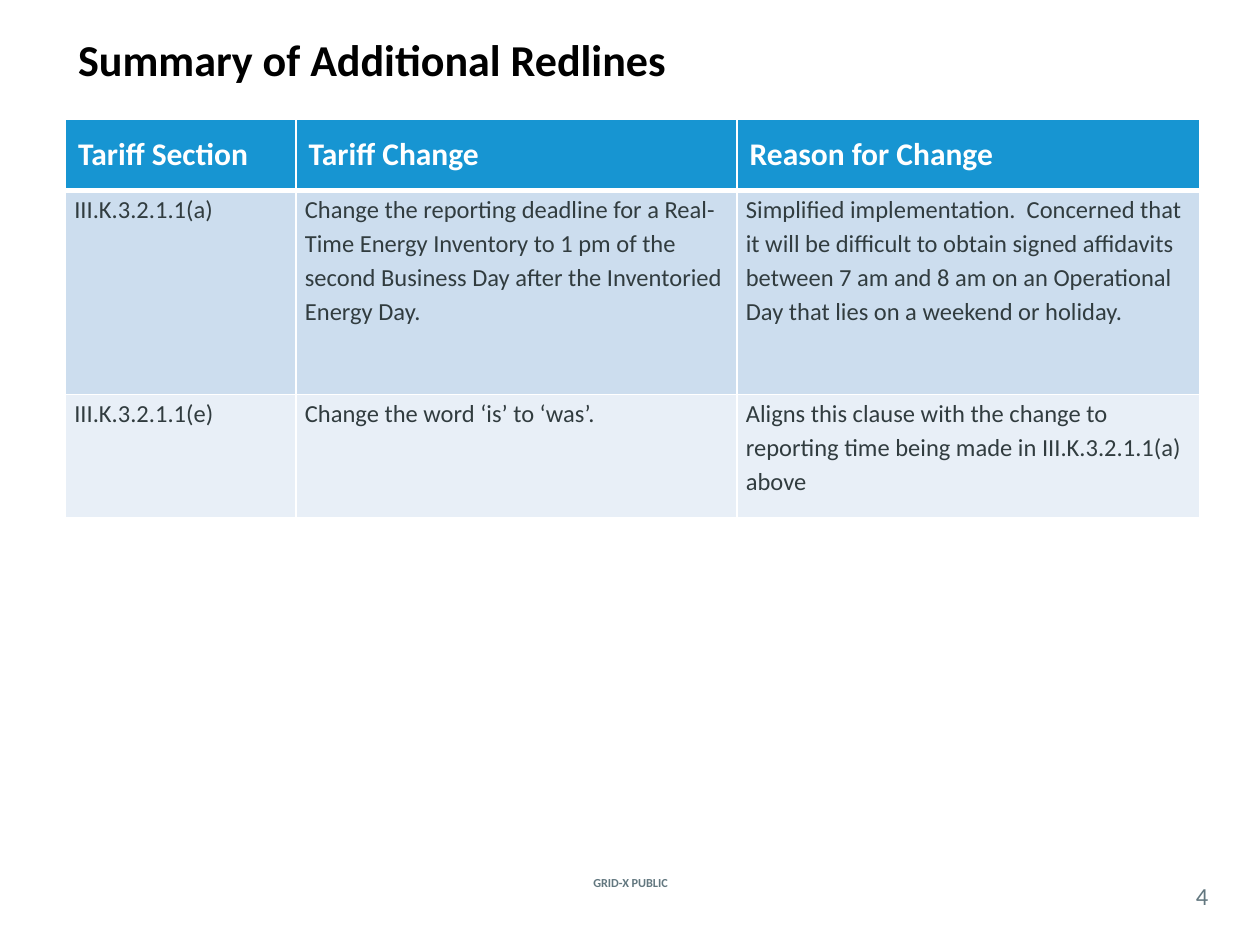
from lxml.etree import SubElement
from pptx import Presentation
from pptx.dml.color import RGBColor
from pptx.enum.text import MSO_ANCHOR, PP_ALIGN
from pptx.oxml.ns import qn
from pptx.util import Inches, Pt

TITLE = "Summary of Additional Redlines"
ROWS = [
    ("Tariff Section", "Tariff Change", "Reason for Change"),
    (
        "III.K.3.2.1.1(a)",
        "Change the reporting deadline for a Real-Time Energy Inventory to 1 pm of the "
        "second Business Day after the Inventoried Energy Day.",
        "Simplified implementation.  Concerned that it will be difficult to obtain signed "
        "affidavits between 7 am and 8 am on an Operational Day that lies on a weekend or holiday.",
    ),
    (
        "III.K.3.2.1.1(e)",
        "Change the word ‘is’ to ‘was’.",
        "Aligns this clause with the change to reporting time being made in III.K.3.2.1.1(a) above",
    ),
]
WIDTHS = (1.83, 3.5, 3.67)
HEIGHTS = (0.56, 1.62, 0.98)
LEFT = 0.52

BLACK = RGBColor(0x00, 0x00, 0x00)
WHITE = RGBColor(0xFF, 0xFF, 0xFF)
GRAY = RGBColor(0x62, 0x77, 0x7F)
DARK = RGBColor(0x31, 0x3C, 0x3F)
FILLS = (
    RGBColor(0x17, 0x95, 0xD2),
    RGBColor(0xCC, 0xDD, 0xEE),
    RGBColor(0xE8, 0xEF, 0xF7),
)
FONT = "Calibri"


def style(para, size, color, bold=False):
    for run in para.runs:
        font = run.font
        font.name, font.size, font.bold = FONT, Pt(size), bold
        font.color.rgb = color


def label(slide, text, box, size, bold=False):
    frame = slide.shapes.add_textbox(*map(Inches, box)).text_frame
    frame.word_wrap = True
    frame.vertical_anchor = MSO_ANCHOR.MIDDLE
    frame.margin_left = frame.margin_right = 0
    frame.margin_top = frame.margin_bottom = 0
    frame.text = text
    para = frame.paragraphs[0]
    para.alignment = PP_ALIGN.CENTER
    style(para, size, GRAY, bold)


def border(cell, row):
    props = cell._tc.get_or_add_tcPr()
    widths = {"L": 1, "R": 1, "T": 3 if row == 1 else 1, "B": 3 if row == 0 else 1}
    for spot, (side, width) in enumerate(widths.items()):
        line = SubElement(props, qn("a:ln" + side), w=str(Pt(width)))
        fill = SubElement(line, qn("a:solidFill"))
        SubElement(fill, qn("a:srgbClr"), val=str(WHITE))
        props.insert(spot, line)


def fill_cell(cell, text, row):
    head = row == 0
    cell.text = text
    cell.fill.solid()
    cell.fill.fore_color.rgb = FILLS[row]
    cell.vertical_anchor = MSO_ANCHOR.MIDDLE if head else MSO_ANCHOR.TOP
    cell.margin_left = cell.margin_right = Inches(0.1 if head else 0.07)
    cell.margin_top = cell.margin_bottom = Inches(0.05 if head else 0)
    para = cell.text_frame.paragraphs[0]
    if head:
        style(para, 18, WHITE, True)
    else:
        para.line_spacing = 1.15
        style(para, 14, DARK)
    border(cell, row)


def main():
    deck = Presentation()
    deck.slide_width, deck.slide_height = Inches(10), Inches(7.5)
    slide = deck.slides.add_slide(deck.slide_layouts[5])

    title = slide.shapes.title
    title.left, title.top = Inches(LEFT), Inches(0.25)
    title.width, title.height = Inches(9), Inches(1.25)
    frame = title.text_frame
    frame.text = TITLE
    frame.vertical_anchor = MSO_ANCHOR.TOP
    frame.margin_top = Inches(0.01)
    frame.paragraphs[0].alignment = PP_ALIGN.LEFT
    style(frame.paragraphs[0], 25.2, BLACK, True)

    box = map(Inches, (LEFT, 0.95, sum(WIDTHS), sum(HEIGHTS)))
    table = slide.shapes.add_table(len(ROWS), len(WIDTHS), *box).table
    for col, width in zip(table.columns, WIDTHS):
        col.width = Inches(width)
    for r, (texts, height) in enumerate(zip(ROWS, HEIGHTS)):
        table.rows[r].height = Inches(height)
        for c, text in enumerate(texts):
            fill_cell(table.cell(r, c), text, r)

    label(slide, "GRID-X PUBLIC", (4.27, 6.92, 1.47, 0.17), 7, True)
    label(slide, "4", (9.33, 6.96, 0.42, 0.29), 14)
    deck.save("out.pptx")


if __name__ == "__main__":
    main()
